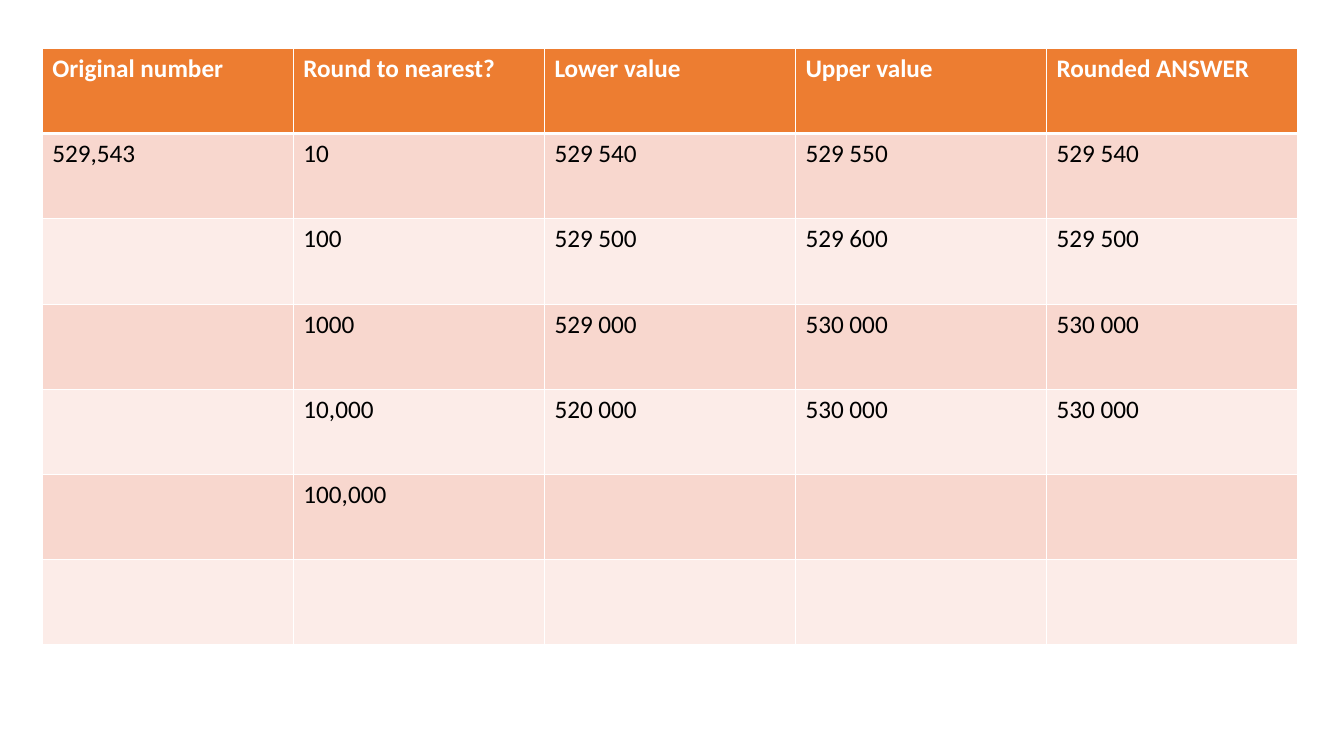
"""Build a slide with a table of one number rounded to several places."""
from dataclasses import dataclass

from lxml.etree import SubElement
from pptx import Presentation
from pptx.dml.color import RGBColor
from pptx.oxml.ns import qn
from pptx.table import _Cell
from pptx.util import Inches, Pt


@dataclass(frozen=True)
class Theme:
    """Colours, font and line widths of the slide."""
    header: str = "ED7D31"
    bands: tuple[str, str] = ("F8D7CE", "FCECE8")
    header_text: str = "FFFFFF"
    body_text: str = "000000"
    border: str = "FFFFFF"
    font: str = "Calibri"
    size: float = 18
    thin: float = 1
    thick: float = 3


@dataclass(frozen=True)
class Rounding:
    """One line of the rounding exercise."""
    number: str = ""
    nearest: str = ""
    lower: str = ""
    upper: str = ""
    answer: str = ""

    def values(self) -> tuple[str, ...]:
        """Return the entries in column order."""
        return self.number, self.nearest, self.lower, self.upper, self.answer


THEME = Theme()
ROUNDINGS = (
    Rounding("Original number", "Round to nearest?", "Lower value",
             "Upper value", "Rounded ANSWER"),
    Rounding("529,543", "10", "529 540", "529 550", "529 540"),
    Rounding("", "100", "529 500", "529 600", "529 500"),
    Rounding("", "1000", "529 000", "530 000", "530 000"),
    Rounding("", "10,000", "520 000", "530 000", "530 000"),
    Rounding("", "100,000"),
    Rounding(),
)


def draw_borders(cell: _Cell, top: float, bottom: float) -> None:
    """Draw the four borders of a cell, with widths in points."""
    properties = cell._tc.get_or_add_tcPr()
    widths = {"a:lnL": THEME.thin, "a:lnR": THEME.thin, "a:lnT": top, "a:lnB": bottom}
    for side, width in widths.items():
        line = SubElement(properties, qn(side), w=str(Pt(width)))
        fill = SubElement(line, qn("a:solidFill"))
        SubElement(fill, qn("a:srgbClr"), val=THEME.border)


def draw_cell(cell: _Cell, value: str, row: int) -> None:
    """Fill, border and letter one cell according to its row."""
    is_header = row == 0
    draw_borders(cell,
                 top=THEME.thick if row == 1 else THEME.thin,
                 bottom=THEME.thick if is_header else THEME.thin)
    cell.fill.solid()
    background = THEME.header if is_header else THEME.bands[(row - 1) % 2]
    cell.fill.fore_color.rgb = RGBColor.from_string(background)
    paragraph = cell.text_frame.paragraphs[0]
    if not value:
        paragraph.font.size = Pt(THEME.size)
        return
    run = paragraph.add_run()
    run.text = value
    run.font.name = THEME.font
    run.font.size = Pt(THEME.size)
    run.font.bold = is_header
    run.font.color.rgb = RGBColor.from_string(
        THEME.header_text if is_header else THEME.body_text)


def main() -> None:
    """Create the presentation and save it."""
    presentation = Presentation()
    presentation.slide_width = Inches(13.33)
    presentation.slide_height = Inches(7.5)
    slide = presentation.slides.add_slide(presentation.slide_layouts[6])
    rounding_table = slide.shapes.add_table(
        len(ROUNDINGS), len(ROUNDINGS[0].values()),
        Inches(0.42), Inches(0.48), Inches(12.45), Inches(5.92)).table
    for row, rounding in enumerate(ROUNDINGS):
        for column, value in enumerate(rounding.values()):
            draw_cell(rounding_table.cell(row, column), value, row)
    presentation.save("out.pptx")


if __name__ == "__main__":
    main()
